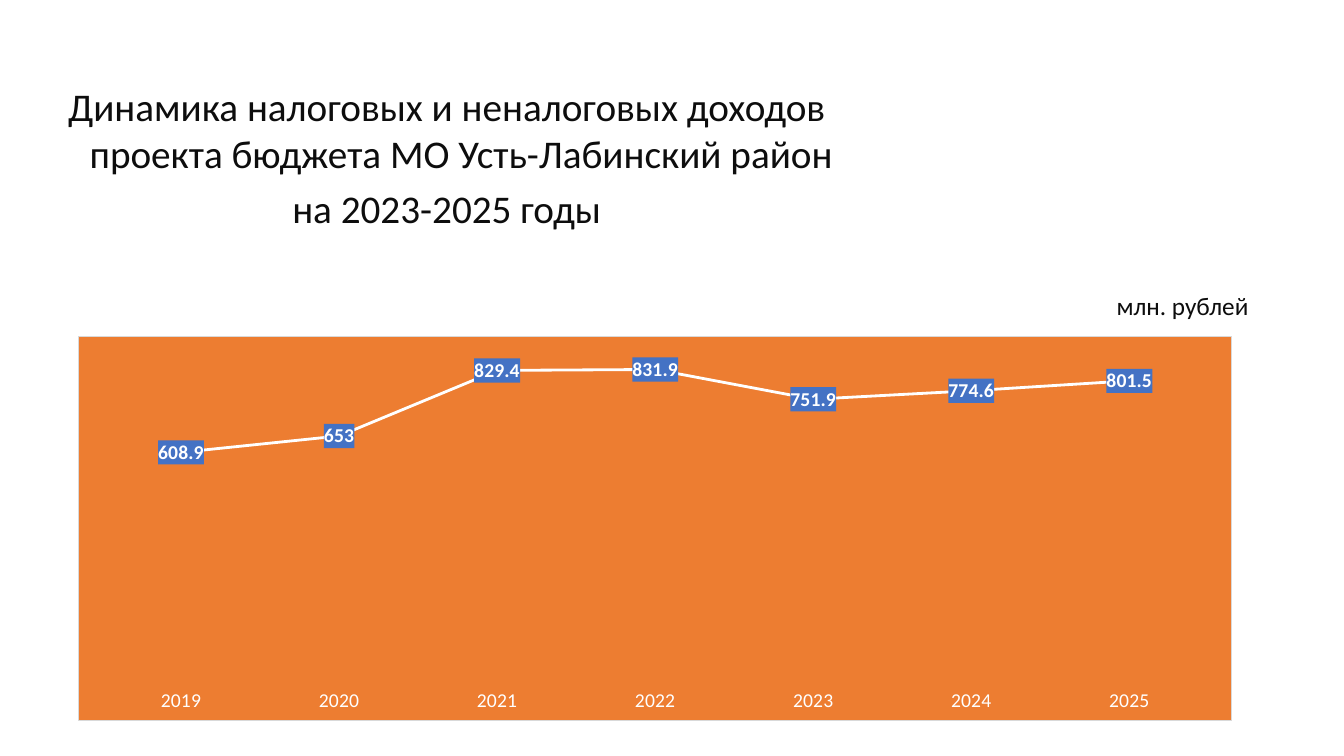
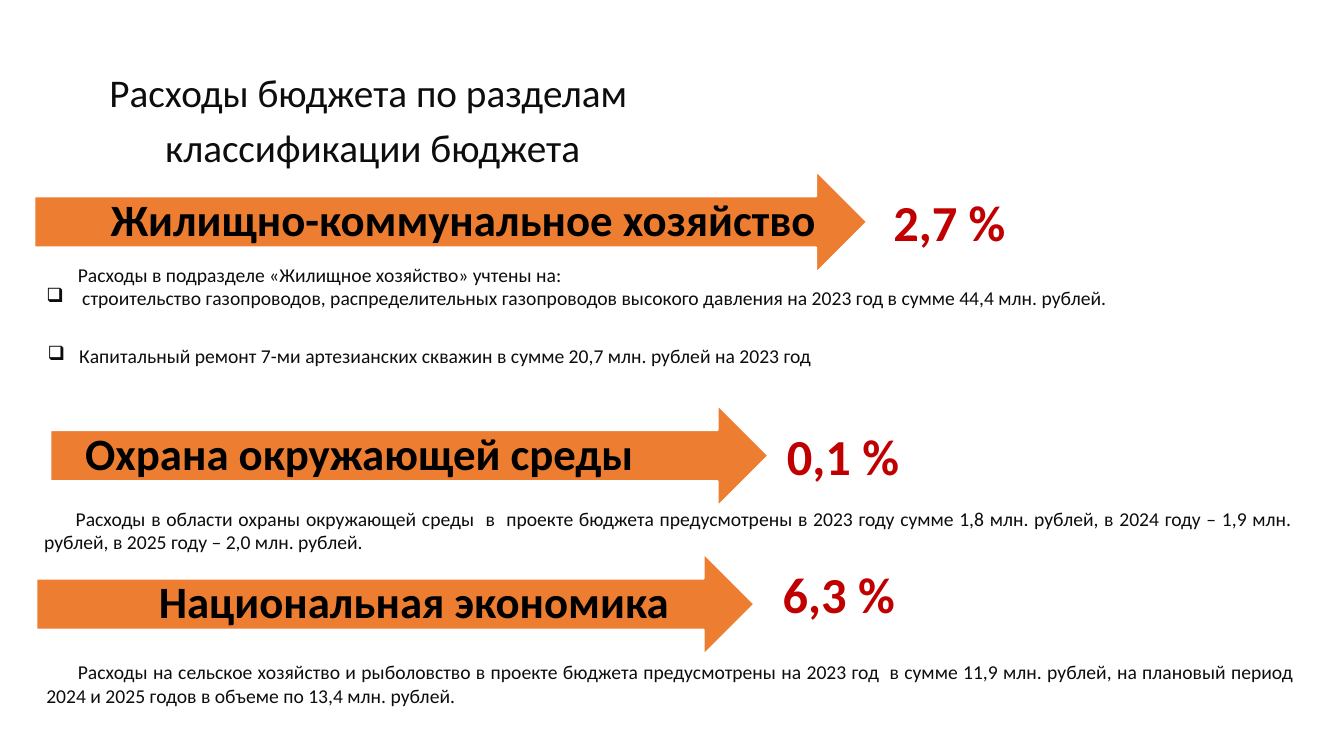
from dataclasses import dataclass
from typing import NamedTuple

from lxml.etree import SubElement
from pptx import Presentation
from pptx.chart.data import CategoryChartData
from pptx.dml.color import RGBColor
from pptx.enum.chart import XL_CHART_TYPE as Chart, XL_LABEL_POSITION as LabelPos
from pptx.enum.chart import XL_MARKER_STYLE as Marker, XL_TICK_LABEL_POSITION as TickPos
from pptx.enum.chart import XL_TICK_MARK as Tick
from pptx.enum.shapes import MSO_SHAPE as Shape
from pptx.enum.text import MSO_ANCHOR as Anchor, MSO_AUTO_SIZE as AutoSize, PP_ALIGN as Align
from pptx.oxml import parse_xml
from pptx.oxml.ns import nsdecls, qn
from pptx.util import Pt


@dataclass(frozen=True)
class Theme:
    font: str = "Calibri"
    ink: str = "0D0D0D"
    black: str = "000000"
    white: str = "FFFFFF"
    orange: str = "ED7D31"
    blue: str = "4472C4"
    red: str = "C00000"
    border: str = "D9D9D9"
    title: int = 28
    unit: int = 18
    body: int = 14
    heading: int = 32
    share: int = 36


T = Theme()


class Box(NamedTuple):
    left: float
    top: float
    width: float
    height: float

    def lengths(self) -> list:
        return [Pt(v) for v in self]


class Line(NamedTuple):
    text: str
    bullet: bool = False


class Note(NamedTuple):
    box: Box
    lines: list[Line]


class Section(NamedTuple):
    heading: str
    arrow: Box
    inset_left: float
    inset_right: float
    share: str
    share_at: tuple[float, float]
    notes: list[Note]


YEARS = ["2019", "2020", "2021", "2022", "2023", "2024", "2025"]
INCOME = [608.9, 653, 829.4, 831.9, 751.9, 774.6, 801.5]

SECTIONS = [
    Section(
        "Жилищно-коммунальное хозяйство ", Box(24.5, 122, 595, 73), 46, 2,
        "2,7 %", (631, 133),
        [
            Note(Box(26, 184, 915, 41), [
                Line("Расходы в подразделе «Жилищное хозяйство» учтены на:"),
                Line(" строительство газопроводов, распределительных газопроводов высокого "
                     "давления на 2023 год в сумме 44,4 млн. рублей.", True),
            ]),
            Note(Box(27, 242, 911, 24), [
                Line("Капитальный ремонт 7-ми артезианских скважин в сумме "
                     "20,7 млн. рублей на 2023 год ", True),
            ]),
        ],
    ),
    Section(
        "Охрана окружающей среды", Box(36, 289, 513, 73), 19, 72,
        "0,1 %", (555, 300),
        [
            Note(Box(24.5, 358.5, 906, 41), [
                Line("Расходы в области охраны окружающей среды  в  проекте бюджета "
                     "предусмотрены в 2023 году сумме 1,8 млн. рублей, в 2024 году – "
                     "1,9 млн. рублей, в 2025 году – 2,0 млн. рублей."),
            ]),
        ],
    ),
    Section(
        "Национальная экономика", Box(26, 395, 513, 73), 68, 23,
        "6,3 %", (552, 399),
        [
            Note(Box(26, 468, 906, 41), [
                Line("Расходы на сельское хозяйство и рыболовство в проекте бюджета "
                     "предусмотрены на 2023 год  в сумме 11,9 млн. рублей, на плановый "
                     "период 2024 и 2025 годов в объеме по 13,4 млн. рублей."),
            ]),
        ],
    ),
]


def rgb(color: str) -> RGBColor:
    return RGBColor.from_string(color)


def style_font(font, size: float, color: str, bold: bool = False) -> None:
    font.name, font.size, font.bold = T.font, Pt(size), bold
    font.color.rgb = rgb(color)


def style_runs(tf, size: float, color: str, bold: bool = False) -> None:
    for p in tf.paragraphs:
        for r in p.runs:
            style_font(r.font, size, color, bold)


def set_indent(p, left: float, first: float) -> None:
    pPr = p._p.get_or_add_pPr()
    pPr.set("marL", str(Pt(left)))
    pPr.set("indent", str(Pt(first)))


def add_titled_slide(prs, title: str, box: Box):
    s = prs.slides.add_slide(prs.slide_layouts[5])
    sp = s.shapes.title
    sp.left, sp.top, sp.width, sp.height = box.lengths()
    tf = sp.text_frame
    tf.text = title
    tf.word_wrap, tf.auto_size = True, AutoSize.NONE
    tf.vertical_anchor = Anchor.TOP
    for i, p in enumerate(tf.paragraphs):
        p.alignment = Align.CENTER
        p.space_before = Pt(0.2 * T.title if i else 0)
        set_indent(p, 27, -27)
    style_runs(tf, T.title, T.ink)
    return s


def add_text(s, text: str, box: Box, size: float, color: str,
             bold: bool = False, wrap: bool = True):
    tf = s.shapes.add_textbox(*box.lengths()).text_frame
    tf.text = text
    tf.word_wrap = wrap
    style_runs(tf, size, color, bold)
    return tf


def add_note(s, note: Note) -> None:
    tf = add_text(s, "\n".join(line.text for line in note.lines), note.box, T.body, T.ink)
    for p, line in zip(tf.paragraphs, note.lines):
        p.alignment = Align.JUSTIFY
        if line.bullet:
            set_indent(p, 22.5, -22.5)
            SubElement(p._p.get_or_add_pPr(), qn("a:buChar")).set("char", "❑")
        else:
            set_indent(p, 0, 22.5)


def add_section(s, section: Section) -> None:
    sp = s.shapes.add_shape(Shape.RIGHT_ARROW, *section.arrow.lengths())
    sp.shadow.inherit = False
    sp.fill.solid()
    sp.fill.fore_color.rgb = rgb(T.orange)
    sp.line.color.rgb = rgb(T.white)
    sp.line.width = Pt(1.5)
    tf = sp.text_frame
    tf.text = section.heading
    tf.word_wrap, tf.vertical_anchor = True, Anchor.MIDDLE
    tf.margin_left, tf.margin_right = Pt(section.inset_left), Pt(section.inset_right)
    tf.margin_top = tf.margin_bottom = 0
    p = tf.paragraphs[0]
    p.alignment, p.line_spacing = Align.CENTER, 0.9
    style_runs(tf, T.heading, T.black, True)
    add_text(s, section.share, Box(*section.share_at, 96, 51), T.share, T.red, True, wrap=False)
    for note in section.notes:
        add_note(s, note)


def fill_xml(color: str, border: str = ""):
    """Chart-part properties with a solid fill and an optional thin border."""
    solid = '<a:solidFill><a:srgbClr val="{}"/></a:solidFill>'
    inner = solid.format(border) if border else "<a:noFill/>"
    return parse_xml(f'<c:spPr {nsdecls("c", "a")}>{solid.format(color)}'
                     f'<a:ln w="{Pt(0.75)}">{inner}</a:ln></c:spPr>')


def add_income_chart(s, box: Box) -> None:
    data = CategoryChartData()
    data.categories = YEARS
    data.add_series("Series 1", INCOME)
    chart = s.shapes.add_chart(Chart.LINE, *box.lengths(), data).chart
    chart.has_title = chart.has_legend = False
    style_font(chart.font, T.body, T.black)
    chart._chartSpace.find(qn("c:txPr")).addprevious(fill_xml(T.orange, T.border))

    axis = chart.value_axis
    axis.minimum_scale, axis.maximum_scale = 0, 900
    axis.has_major_gridlines = axis.visible = False
    axis = chart.category_axis
    axis.major_tick_mark = axis.minor_tick_mark = Tick.NONE
    axis.tick_label_position = TickPos.LOW
    axis.format.line.fill.background()
    style_font(axis.tick_labels.font, T.body, T.white)

    chart.plots[0].vary_by_categories = False
    series = chart.plots[0].series[0]
    series.smooth = False
    series.marker.style = Marker.NONE
    series.format.line.color.rgb = rgb(T.white)
    series.format.line.width = Pt(2)
    labels = series.data_labels
    labels.show_value, labels.position = True, LabelPos.CENTER
    style_font(labels.font, T.body, T.white, True)
    labels._element.find(qn("c:txPr")).addprevious(fill_xml(T.blue))


def main() -> None:
    prs = Presentation()
    prs.slide_width, prs.slide_height = Pt(960), Pt(540)

    s = add_titled_slide(
        prs, "Динамика налоговых и неналоговых доходов проекта бюджета "
             "МО Усть-Лабинский район \nна 2023-2025 годы", Box(0, 55, 638, 113))
    add_text(s, "млн. рублей", Box(790.5, 204, 137, 28), T.unit, T.ink)
    add_income_chart(s, Box(56, 240, 824, 275))

    s = add_titled_slide(
        prs, "Расходы бюджета по разделам\n классификации бюджета", Box(9, 45, 508, 76))
    for section in SECTIONS:
        add_section(s, section)

    prs.save("out.pptx")


if __name__ == "__main__":
    main()
